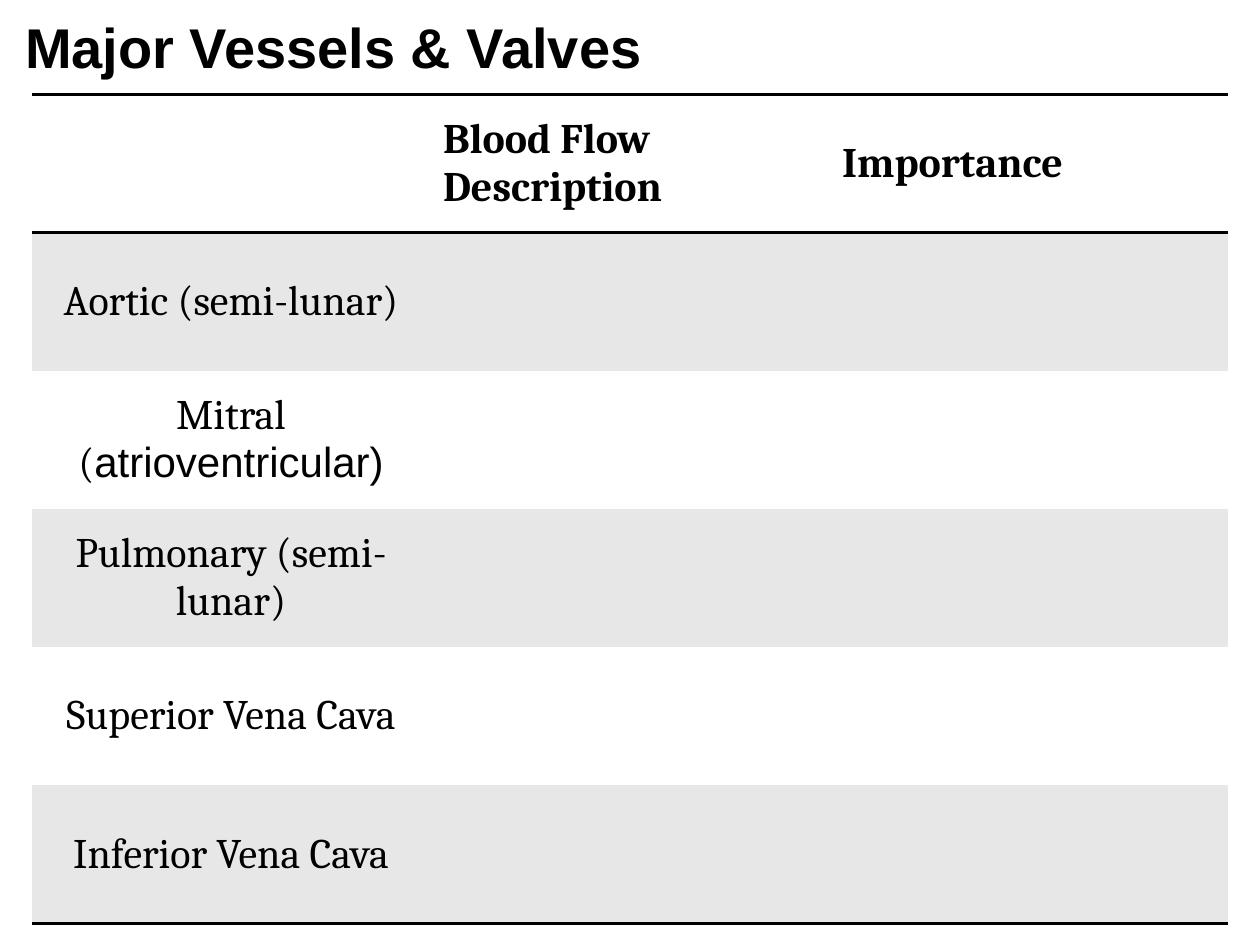
import pptx
import pptx.dml.color
import pptx.enum.text
import pptx.oxml
import pptx.oxml.ns
import pptx.util
from pptx.util import Inches

ALIGN = pptx.enum.text.PP_ALIGN
ANCHOR = pptx.enum.text.MSO_ANCHOR
BLACK, WHITE, GRAY = "000000", "FFFFFF", "E7E7E7"
HEAD = {"name": "Cambria", "size": pptx.util.Pt(24), "bold": True}
BODY = {**HEAD, "bold": False}
TITLE = {"name": "Arial", "size": pptx.util.Pt(32), "bold": True}

# Each cell is a list of (text, format) runs.
ROWS = [
    [[], [("Blood Flow Description", HEAD)], [("Importance", HEAD)]],
    [[("Aortic (semi-lunar)", BODY)], [], []],
    [[("Mitral (", BODY), ("atrioventricular)", {**BODY, "name": "Arial"})], [], []],
    [[("Pulmonary (semi-lunar)", BODY)], [], []],
    [[("Superior Vena Cava", BODY)], [], []],
    [[("Inferior Vena Cava", BODY)], [], []],
]
RULES = {0, 1, len(ROWS)}  # row edges that carry a black line


def paint(fill, color):
    fill.solid()
    fill.fore_color.rgb = pptx.dml.color.RGBColor.from_string(color)


def set_all(item, values):
    for key, value in values.items():
        setattr(item, key, value)


def add_runs(para, runs):
    for text, style in runs:
        run = para.add_run()
        run.text = text
        set_all(run.font, style)
        paint(run.font.fill, BLACK)


def add_edge(cell, side, ruled):
    """Draw one cell border, or clear it; call before filling the cell."""
    ink = f'<a:solidFill><a:srgbClr val="{BLACK}"/></a:solidFill>' if ruled else "<a:noFill/>"
    width = pptx.util.Pt(2) if ruled else 0
    cell._tc.get_or_add_tcPr().append(pptx.oxml.parse_xml(
        f'<a:ln{side} {pptx.oxml.ns.nsdecls("a")} w="{width}">{ink}</a:ln{side}>'))


def add_title(slide, left, top, width, height):
    frame = slide.shapes.add_textbox(left, top, width, height).text_frame
    set_all(frame, {"word_wrap": True, "margin_left": Inches(0.2),
                    "margin_top": Inches(0.1), "vertical_anchor": ANCHOR.TOP})
    add_runs(frame.paragraphs[0], [("Major Vessels & Valves", TITLE)])


def add_grid(slide, left, top, width, height):
    table = slide.shapes.add_table(len(ROWS), len(ROWS[0]), left, top, width, height).table
    set_all(table, {"first_row": False, "horz_banding": False})
    for i, row in enumerate(ROWS):
        for j, runs in enumerate(row):
            cell = table.cell(i, j)
            edges = {"L": False, "R": False, "T": i in RULES, "B": i + 1 in RULES}
            for side, ruled in edges.items():
                add_edge(cell, side, ruled)
            paint(cell.fill, GRAY if i % 2 else WHITE)
            cell.vertical_anchor = ANCHOR.MIDDLE
            para = cell.text_frame.paragraphs[0]
            para.alignment = ALIGN.CENTER if i and runs else ALIGN.LEFT
            add_runs(para, runs)


def main():
    deck = pptx.Presentation()
    set_all(deck, {"slide_width": Inches(10), "slide_height": Inches(7.5)})
    slide = deck.slides.add_slide(deck.slide_layouts[6])
    paint(slide.background.fill, WHITE)
    add_title(slide, 0, 0, Inches(10), Inches(0.64))
    add_grid(slide, Inches(0.25), Inches(0.75), Inches(9.5), Inches(6.58))
    deck.save("out.pptx")


if __name__ == "__main__":
    main()
